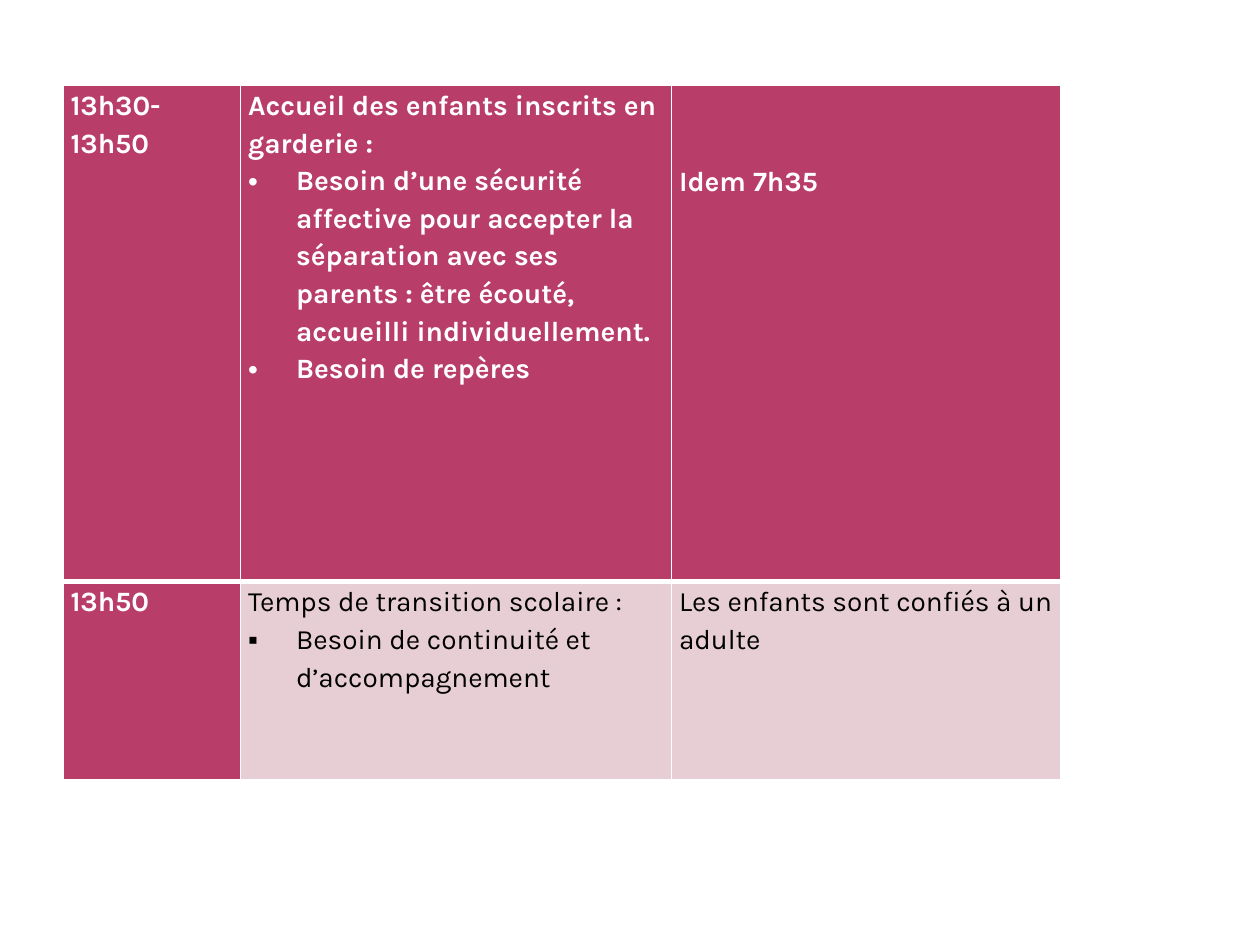
from dataclasses import dataclass

from lxml.etree import SubElement
from pptx import Presentation
from pptx.dml.color import RGBColor
from pptx.enum.text import MSO_ANCHOR
from pptx.oxml.ns import qn
from pptx.util import Inches, Pt


@dataclass(frozen=True)
class Theme:
    font: str = "Karla"
    size: float = 16
    line_spacing: float = 1.15
    accent: str = "B83D68"
    tint: str = "E6CED4"
    light: str = "FFFFFF"
    dark: str = "000000"
    rule: float = 1
    header_rule: float = 3
    indent: float = 0.38
    margin: float = 0.06


THEME = Theme()
COLS = (1.41, 3.42, 3.09)
ROWS = (3.94, 1.57)
TWO_LINES = 0.6  # drop that aligns a text with the third line of its row

# Each cell: paragraphs as (bullet, text), then the top margin
SCHEDULE = [
    [
        ([("", "13h30-13h50")], 0),
        ([("", "Accueil des enfants inscrits en garderie :"),
          ("•", "Besoin d’une sécurité affective pour accepter la séparation "
                "avec ses parents : être écouté, accueilli individuellement."),
          ("•", "Besoin de repères")], 0),
        ([("", "Idem 7h35")], TWO_LINES),
    ],
    [
        ([("", "13h50")], 0),
        ([("", "Temps de transition scolaire :"),
          ("▪", "Besoin de continuité et d’accompagnement")], 0),
        ([("", "Les enfants sont confiés à un adulte")], 0),
    ],
]


def set_attrs(obj, values):
    for name, value in values.items():
        setattr(obj, name, value)


def add_bullet(p, char):
    pPr = p._p.get_or_add_pPr()
    indent = Inches(THEME.indent)
    pPr.set("marL", str(indent))
    pPr.set("indent", str(-indent))
    SubElement(pPr, qn("a:buFont"), typeface="Arial")
    SubElement(pPr, qn("a:buChar"), char=char)


def set_borders(cell, top, bottom):
    tcPr = cell._tc.get_or_add_tcPr()
    widths = {"L": THEME.rule, "R": THEME.rule, "T": top, "B": bottom}
    for side, width in widths.items():
        ln = SubElement(tcPr, qn(f"a:ln{side}"), w=str(Pt(width)))
        fill = SubElement(ln, qn("a:solidFill"))
        SubElement(fill, qn("a:srgbClr"), val=THEME.light)


def fill_cell(cell, paragraphs, top, strong):
    side = Inches(THEME.margin)
    set_attrs(cell, {"margin_left": side, "margin_right": side,
                     "margin_top": Inches(top), "margin_bottom": 0,
                     "vertical_anchor": MSO_ANCHOR.TOP})
    cell.fill.solid()
    cell.fill.fore_color.rgb = RGBColor.from_string(
        THEME.accent if strong else THEME.tint)
    tf = cell.text_frame
    for i, (bullet, text) in enumerate(paragraphs):
        p = tf.add_paragraph() if i else tf.paragraphs[0]
        p.line_spacing = THEME.line_spacing
        if bullet:
            add_bullet(p, bullet)
        r = p.add_run()
        r.text = text
        set_attrs(r.font, {"name": THEME.font, "size": Pt(THEME.size),
                           "bold": strong})
        r.font.color.rgb = RGBColor.from_string(
            THEME.light if strong else THEME.dark)


def add_schedule(s, left, top):
    """Timetable: header row and first column carry the accent colour."""
    table = s.shapes.add_table(
        len(ROWS), len(COLS), left, top,
        Inches(sum(COLS)), Inches(sum(ROWS))).table
    for column, width in zip(table.columns, COLS):
        column.width = Inches(width)
    for i, (height, cells) in enumerate(zip(ROWS, SCHEDULE)):
        table.rows[i].height = Inches(height)
        header = i == 0
        for j, (paragraphs, drop) in enumerate(cells):
            cell = table.cell(i, j)
            # The thick rule lies between the header and the next row
            set_borders(cell,
                        THEME.rule if header else THEME.header_rule,
                        THEME.header_rule if header else THEME.rule)
            fill_cell(cell, paragraphs, drop, strong=header or j == 0)


def main():
    prs = Presentation()
    set_attrs(prs, {"slide_width": Inches(10), "slide_height": Inches(7.5)})
    s = prs.slides.add_slide(prs.slide_layouts[6])
    add_schedule(s, int(prs.slide_width * 0.05), int(prs.slide_height * 0.09))
    prs.save("out.pptx")


if __name__ == "__main__":
    main()
